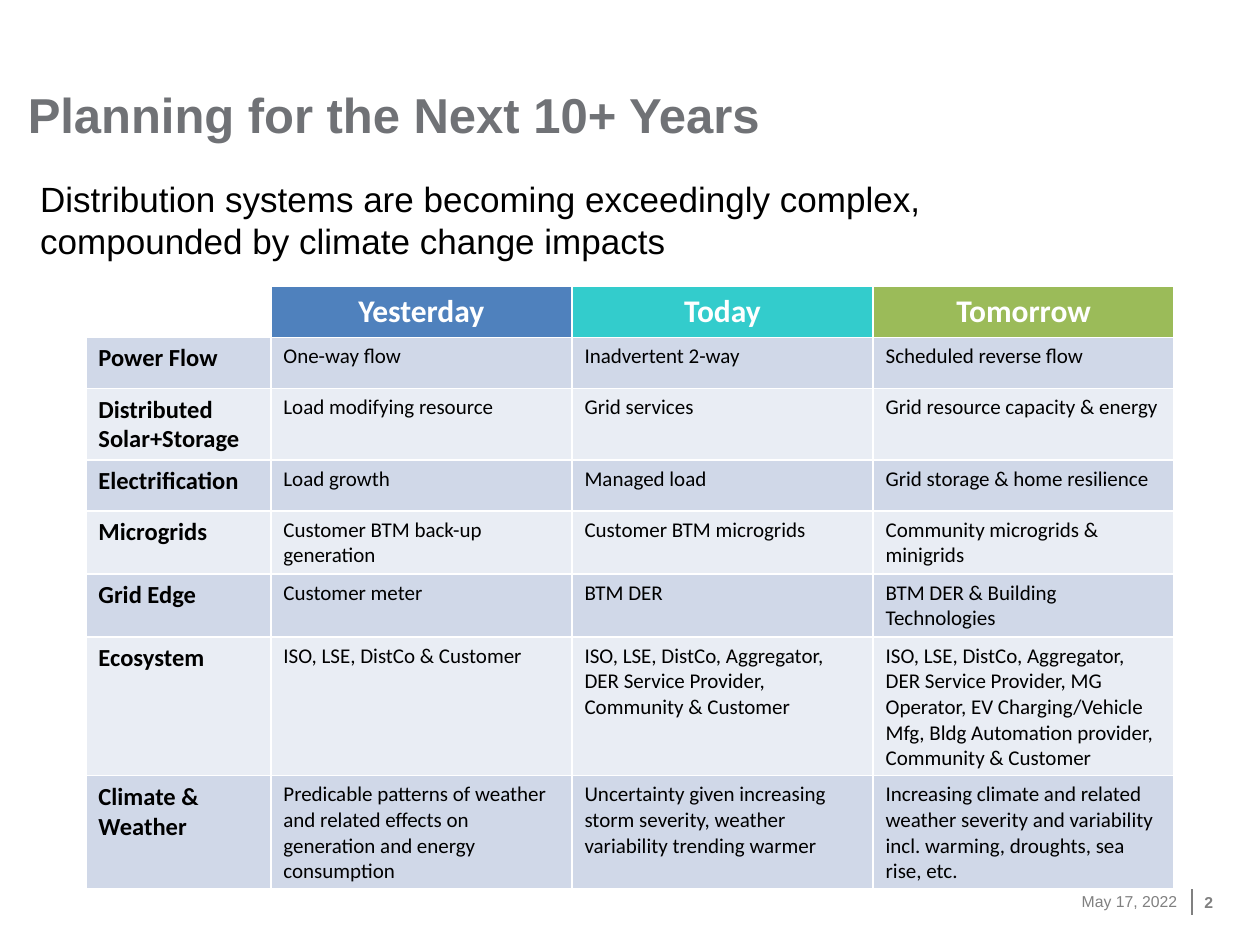
from dataclasses import dataclass

from lxml.etree import SubElement
from pptx import Presentation
from pptx.dml.color import RGBColor
from pptx.enum.shapes import MSO_CONNECTOR
from pptx.enum.text import MSO_ANCHOR, MSO_AUTO_SIZE, PP_ALIGN
from pptx.oxml.ns import qn
from pptx.util import Cm, Pt


@dataclass(frozen=True)
class Theme:
    """Colours, fonts and type sizes of the slide."""
    heading: str = "707276"
    text: str = "000000"
    light: str = "FFFFFF"
    muted: str = "808080"
    headers: tuple = ("4F81BD", "33CCCC", "9BBB59")
    bands: tuple = ("D0D8E8", "E9EDF4")
    font: str = "Arial"
    table_font: str = "Calibri"
    title_size: int = 28
    lead_size: int = 20
    header_size: int = 18
    label_size: int = 14
    body_size: int = 12
    footer_size: int = 9


THEME = Theme()
PERIODS = ("Yesterday", "Today", "Tomorrow")
TOPICS = (
    ("Power Flow", "One-way flow", "Inadvertent 2-way", "Scheduled reverse flow"),
    ("Distributed Solar+Storage", "Load modifying resource", "Grid services",
     "Grid resource capacity & energy"),
    ("Electrification", "Load growth", "Managed load",
     "Grid storage & home resilience"),
    ("Microgrids", "Customer BTM back-up generation", "Customer BTM microgrids",
     "Community microgrids & minigrids"),
    ("Grid Edge", "Customer meter", "BTM DER", "BTM DER & Building Technologies"),
    ("Ecosystem", "ISO, LSE, DistCo & Customer",
     "ISO, LSE, DistCo, Aggregator, DER Service Provider, Community & Customer",
     "ISO, LSE, DistCo, Aggregator, DER Service Provider, MG Operator, "
     "EV Charging/Vehicle Mfg, Bldg Automation provider, Community & Customer"),
    ("Climate & Weather",
     "Predicable patterns of weather and related effects on generation and "
     "energy consumption",
     "Uncertainty given increasing storm severity, weather variability "
     "trending warmer",
     "Increasing climate and related weather severity and variability incl. "
     "warming, droughts, sea rise, etc."),
)


def write(tf, text, size, color, bold=False, font=THEME.font, align=PP_ALIGN.LEFT):
    """Set and format the single paragraph of a text frame."""
    tf.text = text
    p = tf.paragraphs[0]
    p.alignment = align
    f = p.runs[0].font
    f.name, f.size, f.bold = font, Pt(size), bold
    f.color.rgb = RGBColor.from_string(color)


def set_frame(tf, anchor, right=0):
    """Anchor a text frame and clear its insets except the right one."""
    tf.margin_left = tf.margin_top = tf.margin_bottom = 0
    tf.margin_right = right
    tf.vertical_anchor = anchor
    tf.word_wrap = True
    tf.auto_size = MSO_AUTO_SIZE.NONE


def add_title(s, left, top, width, height):
    """Place and format the title placeholder."""
    sp = s.shapes.title
    sp.left, sp.top, sp.width, sp.height = left, top, width, height
    set_frame(sp.text_frame, MSO_ANCHOR.BOTTOM)
    write(sp.text_frame, "Planning for the Next 10+ Years",
          THEME.title_size, THEME.heading, True)


def add_lead(s, left, top, width, height):
    """Add the lead statement under the title."""
    tf = s.shapes.add_textbox(left, top, width, height).text_frame
    tf.word_wrap = True
    tf.auto_size = MSO_AUTO_SIZE.SHAPE_TO_FIT_TEXT
    write(tf, "Distribution systems are becoming exceedingly complex, "
          "compounded by climate change impacts", THEME.lead_size, THEME.text)


def fill_cell(cell, color):
    """Give a table cell a solid fill."""
    cell.fill.solid()
    cell.fill.fore_color.rgb = RGBColor.from_string(color)


def add_comparison(s, left, top, width, height):
    """Add the table comparing each topic across the periods."""
    table = s.shapes.add_table(len(TOPICS) + 1, len(PERIODS) + 1,
                               left, top, width, height).table
    label_width = Cm(3.73)
    table.columns[0].width = label_width
    table.cell(0, 0).fill.background()
    for col, (period, color) in enumerate(zip(PERIODS, THEME.headers), 1):
        table.columns[col].width = (width - label_width) // len(PERIODS)
        cell = table.cell(0, col)
        fill_cell(cell, color)
        write(cell.text_frame, period, THEME.header_size, THEME.light, True,
              THEME.table_font, PP_ALIGN.CENTER)
    for row, texts in enumerate(TOPICS, 1):
        for col, text in enumerate(texts):
            cell = table.cell(row, col)
            fill_cell(cell, THEME.bands[(row - 1) % 2])
            size = THEME.body_size if col else THEME.label_size
            write(cell.text_frame, text, size, THEME.text, col == 0,
                  THEME.table_font)


def add_footer(s, left, top, width, height):
    """Add the date, divider and slide number."""
    date = s.shapes.add_textbox(left, top, Cm(3.33), height).text_frame
    set_frame(date, MSO_ANCHOR.MIDDLE)
    write(date, "May 17, 2022", THEME.footer_size, THEME.muted,
          align=PP_ALIGN.RIGHT)

    x = left + Cm(3.63)
    line = s.shapes.add_connector(MSO_CONNECTOR.STRAIGHT, x, top + Cm(0.28),
                                  x, top + Cm(0.79))
    line.line.color.rgb = RGBColor.from_string(THEME.muted)
    line.line.width = Pt(1)
    SubElement(line._element.spPr, qn("a:effectLst"))

    number_width = Cm(0.64)
    number = s.shapes.add_textbox(left + width - number_width, top + Cm(0.03),
                                  number_width, height).text_frame
    set_frame(number, MSO_ANCHOR.MIDDLE, Cm(0.25))
    write(number, "2", THEME.footer_size, THEME.muted, True)


def main():
    """Build and save the slide."""
    prs = Presentation()
    prs.slide_width, prs.slide_height = Cm(25.4), Cm(19.05)
    s = prs.slides.add_slide(prs.slide_layouts[5])
    add_footer(s, Cm(20.4), Cm(17.65), Cm(4.52), Cm(1.02))
    add_title(s, Cm(0.56), Cm(0.84), Cm(18.54), Cm(2.06))
    add_lead(s, Cm(0.56), Cm(3.45), Cm(21.11), Cm(1.96))
    add_comparison(s, Cm(1.73), Cm(5.77), Cm(21.94), Cm(8.24))
    prs.save("out.pptx")


if __name__ == "__main__":
    main()
